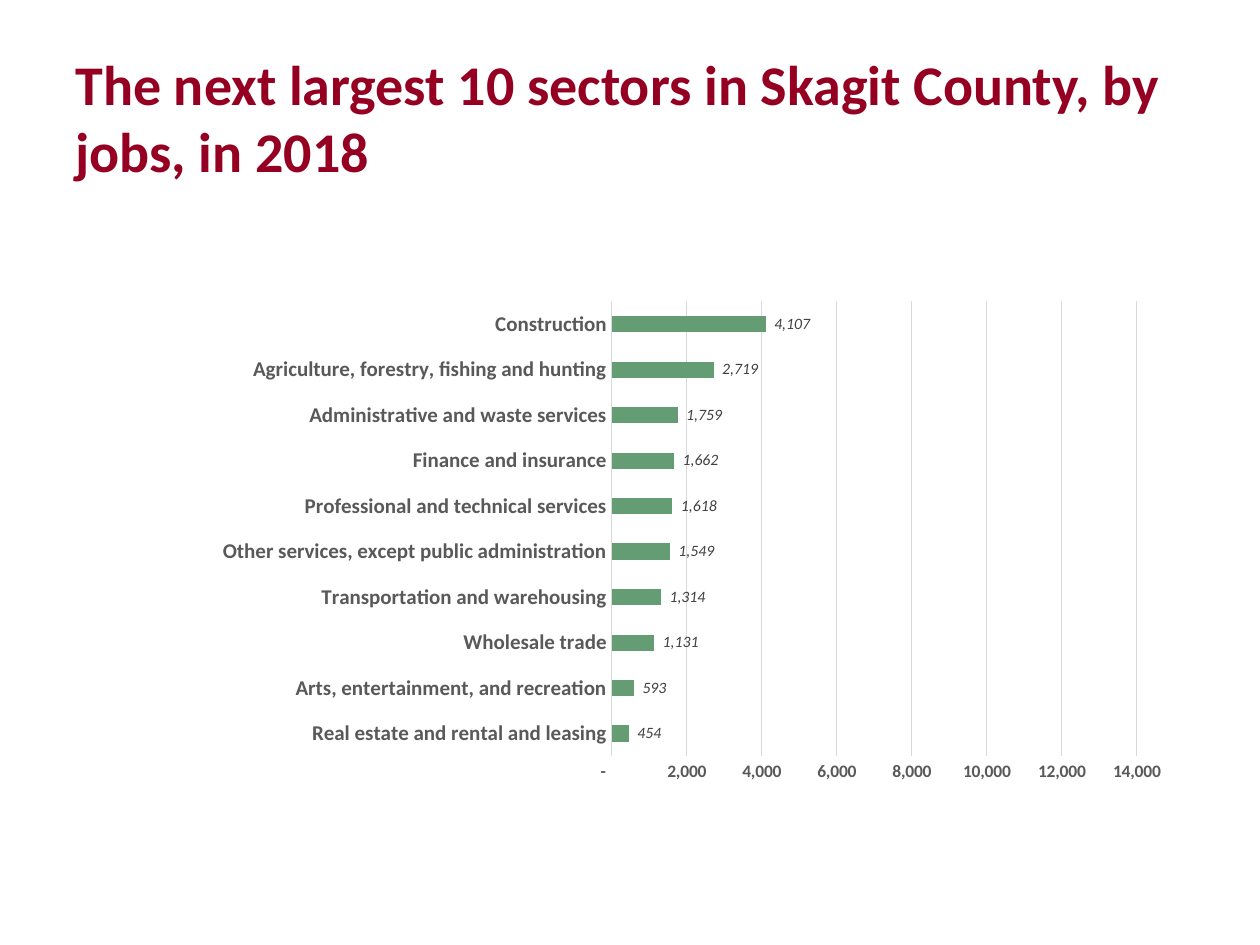
from dataclasses import dataclass
from typing import Any, NamedTuple

from lxml import etree
from pptx import Presentation
from pptx.chart.data import CategoryChartData
from pptx.dml.color import RGBColor
from pptx.enum.chart import XL_CHART_TYPE, XL_LABEL_POSITION, XL_TICK_MARK
from pptx.enum.text import MSO_ANCHOR
from pptx.oxml.ns import qn
from pptx.util import Inches, Pt

BAR_CLUSTERED = XL_CHART_TYPE.BAR_CLUSTERED
OUTSIDE_END = XL_LABEL_POSITION.OUTSIDE_END
NO_TICK = XL_TICK_MARK.NONE
MIDDLE = MSO_ANCHOR.MIDDLE


@dataclass(frozen=True)
class Theme:
    font: str = "Calibri"
    heading: RGBColor = RGBColor(0x95, 0x00, 0x22)
    bar: RGBColor = RGBColor(0x64, 0x9C, 0x73)
    axis_text: RGBColor = RGBColor(0x59, 0x59, 0x59)
    label_text: RGBColor = RGBColor(0x40, 0x40, 0x40)
    chart_text: RGBColor = RGBColor(0x00, 0x00, 0x00)
    rule: RGBColor = RGBColor(0xD9, 0xD9, 0xD9)
    heading_size: int = 32
    category_size: int = 12
    scale_size: int = 10
    label_size: int = 9
    rule_width: float = 0.75


class Box(NamedTuple):
    left: float
    top: float
    width: float
    height: float


class Sector(NamedTuple):
    name: str
    jobs: int


THEME = Theme()
HEADING = "The next largest 10 sectors in Skagit County, by jobs, in 2018"
HEADING_BOX = Box(0.5, 0.3, 9, 1.25)
CHART_BOX = Box(0.5, 1.75, 9, 4.66)
PLOT_AREA = {"x": 0.484, "y": 0.138, "w": 0.463, "h": 0.775}
JOBS_FORMAT = '_(* #,##0_);_(* \\(#,##0\\);_(* "-"??_);_(@_)'
SECTORS = [
    Sector("Real estate and rental and leasing", 454),
    Sector("Arts, entertainment, and recreation", 593),
    Sector("Wholesale trade", 1131),
    Sector("Transportation and warehousing", 1314),
    Sector("Other services, except public administration", 1549),
    Sector("Professional and technical services", 1618),
    Sector("Finance and insurance", 1662),
    Sector("Administrative and waste services", 1759),
    Sector("Agriculture, forestry, fishing and hunting", 2719),
    Sector("Construction", 4107),
]


def apply(target: Any, values: dict[str, Any]) -> None:
    for attribute, value in values.items():
        setattr(target, attribute, value)


def style_font(font: Any, size: int, color: RGBColor,
               bold: bool = False, italic: bool = False) -> None:
    apply(font, {"name": THEME.font, "size": Pt(size), "bold": bold, "italic": italic})
    font.color.rgb = color


def style_rule(line: Any) -> None:
    line.color.rgb = THEME.rule
    line.width = Pt(THEME.rule_width)


def place_plot(chart: Any) -> None:
    plot_area = chart.plots[0]._element.getparent()
    for automatic in plot_area.findall(qn("c:layout")):
        plot_area.remove(automatic)
    layout = etree.Element(qn("c:layout"))
    manual = etree.SubElement(layout, qn("c:manualLayout"))
    settings = {"layoutTarget": "inner", "xMode": "edge", "yMode": "edge", **PLOT_AREA}
    for tag, value in settings.items():
        etree.SubElement(manual, qn(f"c:{tag}"), val=str(value))
    plot_area.insert(0, layout)


def add_heading(slide: Any, text: str, box: Box) -> None:
    frame = slide.shapes.add_textbox(*map(Inches, box)).text_frame
    apply(frame, {"word_wrap": True, "vertical_anchor": MIDDLE})
    run = frame.paragraphs[0].add_run()
    run.text = text
    style_font(run.font, THEME.heading_size, THEME.heading, bold=True)


def style_axes(chart: Any) -> None:
    sector_axis, jobs_axis = chart.category_axis, chart.value_axis
    for axis, size in ((sector_axis, THEME.category_size), (jobs_axis, THEME.scale_size)):
        apply(axis, {"major_tick_mark": NO_TICK, "minor_tick_mark": NO_TICK})
        style_font(axis.tick_labels.font, size, THEME.axis_text, bold=True)
    style_rule(sector_axis.format.line)
    apply(jobs_axis, {"minimum_scale": 0, "maximum_scale": 14000, "major_unit": 2000,
                      "has_major_gridlines": True})
    style_rule(jobs_axis.major_gridlines.format.line)
    jobs_axis.format.line.fill.background()
    apply(jobs_axis.tick_labels,
          {"number_format": JOBS_FORMAT, "number_format_is_linked": False})


def add_jobs_chart(slide: Any, sectors: list[Sector], box: Box) -> None:
    jobs_data = CategoryChartData(number_format=JOBS_FORMAT)
    jobs_data.categories = [sector.name for sector in sectors]
    jobs_data.add_series("Series 1", [sector.jobs for sector in sectors])
    chart = slide.shapes.add_chart(BAR_CLUSTERED, *map(Inches, box), jobs_data).chart
    apply(chart, {"has_title": False, "has_legend": False})
    style_font(chart.font, THEME.scale_size, THEME.chart_text)
    style_axes(chart)

    bars = chart.plots[0]
    apply(bars, {"gap_width": 182, "vary_by_categories": False, "has_data_labels": True})
    fill = bars.series[0].format.fill
    fill.solid()
    fill.fore_color.rgb = THEME.bar
    apply(bars.data_labels, {"show_value": True, "position": OUTSIDE_END,
                             "number_format": JOBS_FORMAT,
                             "number_format_is_linked": False})
    style_font(bars.data_labels.font, THEME.label_size, THEME.label_text, italic=True)
    place_plot(chart)


def main() -> None:
    deck = Presentation()
    apply(deck, {"slide_width": Inches(10), "slide_height": Inches(7.5)})
    slide = deck.slides.add_slide(deck.slide_layouts[6])
    add_heading(slide, HEADING, HEADING_BOX)
    add_jobs_chart(slide, SECTORS, CHART_BOX)
    deck.save("out.pptx")


if __name__ == "__main__":
    main()
